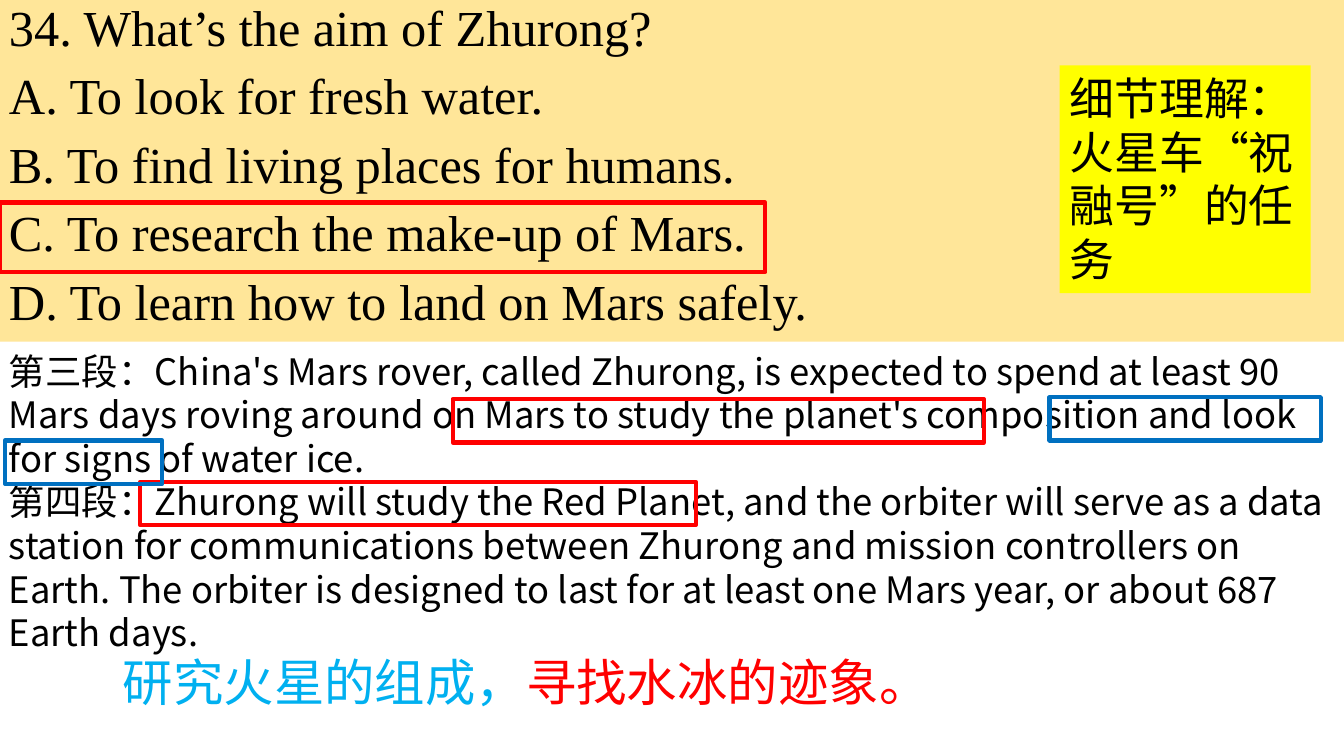
from pptx import Presentation
from pptx.dml.color import RGBColor
from pptx.enum.shapes import MSO_SHAPE as Shape
from pptx.enum.text import MSO_ANCHOR as Anchor, PP_ALIGN as Align
from pptx.util import Inches, Pt

WIDTH, HEIGHT = 13.33, 7.5
SERIF, SANS = "Times New Roman", "Noto Sans CJK SC"
BLACK, RED, BLUE, SKY = "000000", "FF0000", "0070C0", "00B0F0"
CREAM, YELLOW = "FFE699", "FFFF00"

QUESTION = [
    "34. What’s the aim of Zhurong?",
    "A. To look for fresh water.",
    "B. To find living places for humans.",
    "C. To research the make-up of Mars.",
    "D. To learn how to land on Mars safely.",
]
HINT = ["细节理解：火星车“祝融号”的任务"]
PASSAGE = [
    "第三段：China's Mars rover, called Zhurong, is expected to spend at least 90 "
    "Mars days roving around on Mars to study the planet's composition and look "
    "for signs of water ice.",
    "第四段：Zhurong will study the Red Planet, and the orbiter will serve as a data "
    "station for communications between Zhurong and mission controllers on Earth. "
    "The orbiter is designed to last for at least one Mars year, or about 687 Earth days.",
]
SUMMARY = [("研究火星的组成，", SKY), ("寻找水冰的迹象。", RED)]

# Frames as (left, top, width, height) in inches
FRAME_HEIGHT = 0.43
FRAMES = [
    ((0, 2.01, 7.59, 0.69), RED),
    ((4.49, 3.96, 5.27, FRAME_HEIGHT), RED),
    ((1.39, 4.78, 5.51, FRAME_HEIGHT), RED),
    ((10.41, 3.94, 2.69, FRAME_HEIGHT), BLUE),
    ((0.05, 4.37, 1.56, FRAME_HEIGHT), BLUE),
]


def color(value):
    return RGBColor.from_string(value)


def add_panel(page, box, fill=None):
    panel = page.shapes.add_shape(Shape.RECTANGLE, *map(Inches, box))
    panel.shadow.inherit = False
    panel.line.fill.background()
    if fill:
        panel.fill.solid()
        panel.fill.fore_color.rgb = color(fill)
    else:
        panel.fill.background()
    return panel


def style(para, font, size, spacing=None, before=0):
    para.alignment = Align.LEFT
    para.font.name, para.font.size = font, Pt(size)
    para.font.color.rgb = color(BLACK)
    para.space_before = Pt(before)
    if spacing:
        para.line_spacing = spacing


def write(frame, lines, *look):
    frame.word_wrap = True
    frame.vertical_anchor = Anchor.TOP
    for index, line in enumerate(lines):
        para = frame.add_paragraph() if index else frame.paragraphs[0]
        para.text = line
        style(para, *look)


# Question with its four choices
def add_question(page, box):
    write(add_panel(page, box, CREAM).text_frame, QUESTION, SERIF, 36, 0.9, 10)


# Yellow note on the question type
def add_hint(page, box):
    write(add_panel(page, box, YELLOW).text_frame, HINT, SERIF, 32)


# Paragraphs that hold the evidence
def add_passage(page, box):
    write(page.shapes.add_textbox(*map(Inches, box)).text_frame, PASSAGE, SANS, 26)


# Outline around an answer or a key phrase
def add_frame(page, box, line):
    frame = add_panel(page, box)
    frame.line.color.rgb = color(line)
    frame.line.width = Pt(3)


# Two-colour conclusion
def add_summary(page, box):
    frame = page.shapes.add_textbox(*map(Inches, box)).text_frame
    frame.word_wrap = True
    para = frame.paragraphs[0]
    style(para, SANS, 36, 1.2)
    for text, tint in SUMMARY:
        span = para.add_run()
        span.text = text
        span.font.color.rgb = color(tint)


def main():
    deck = Presentation()
    deck.slide_width, deck.slide_height = Inches(WIDTH), Inches(HEIGHT)
    page = deck.slides.add_slide(deck.slide_layouts[6])
    add_question(page, (-0.01, -0.02, WIDTH + 0.01, 3.41))
    add_hint(page, (10.51, 0.65, 2.49, 2.26))
    add_passage(page, (-0.01, 3.41, WIDTH + 0.01, 3.16))
    for box, line in FRAMES:
        add_frame(page, box, line)
    add_summary(page, (1.12, 6.29, 8.24, 0.78))
    deck.save("out.pptx")


if __name__ == "__main__":
    main()
